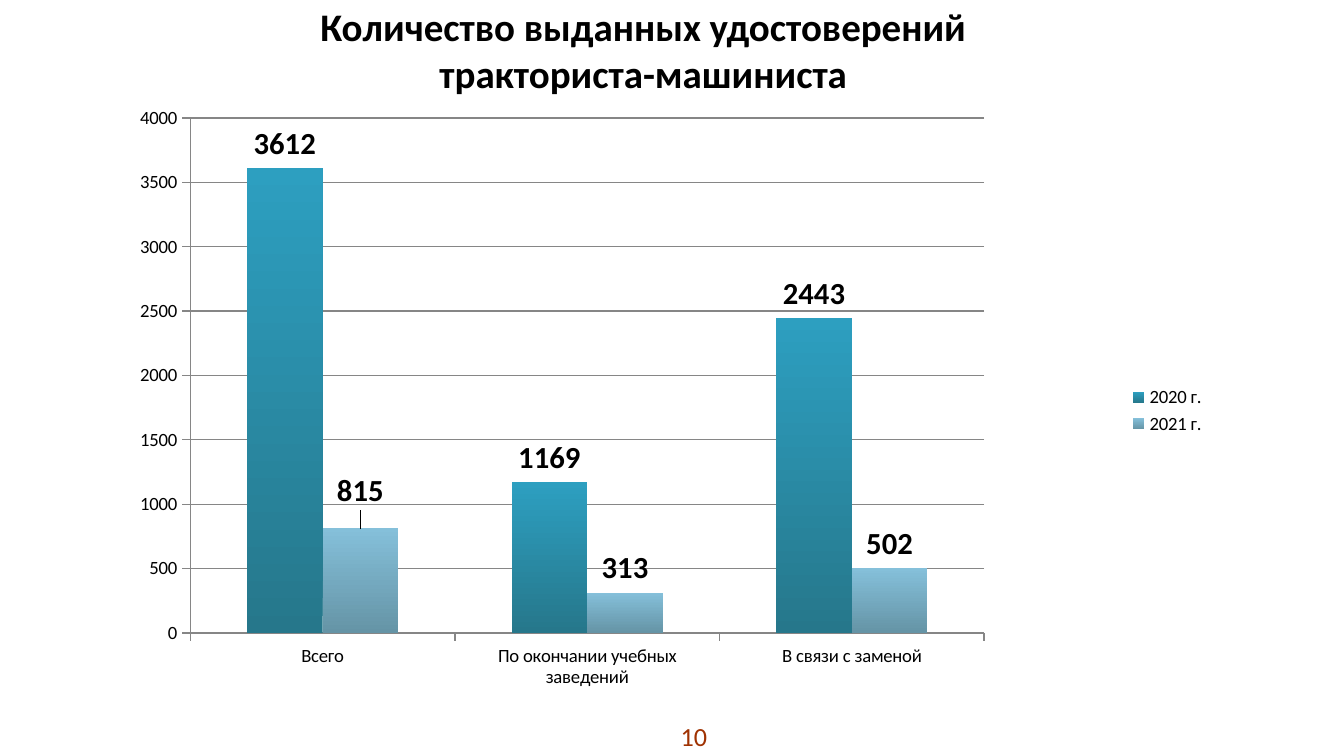
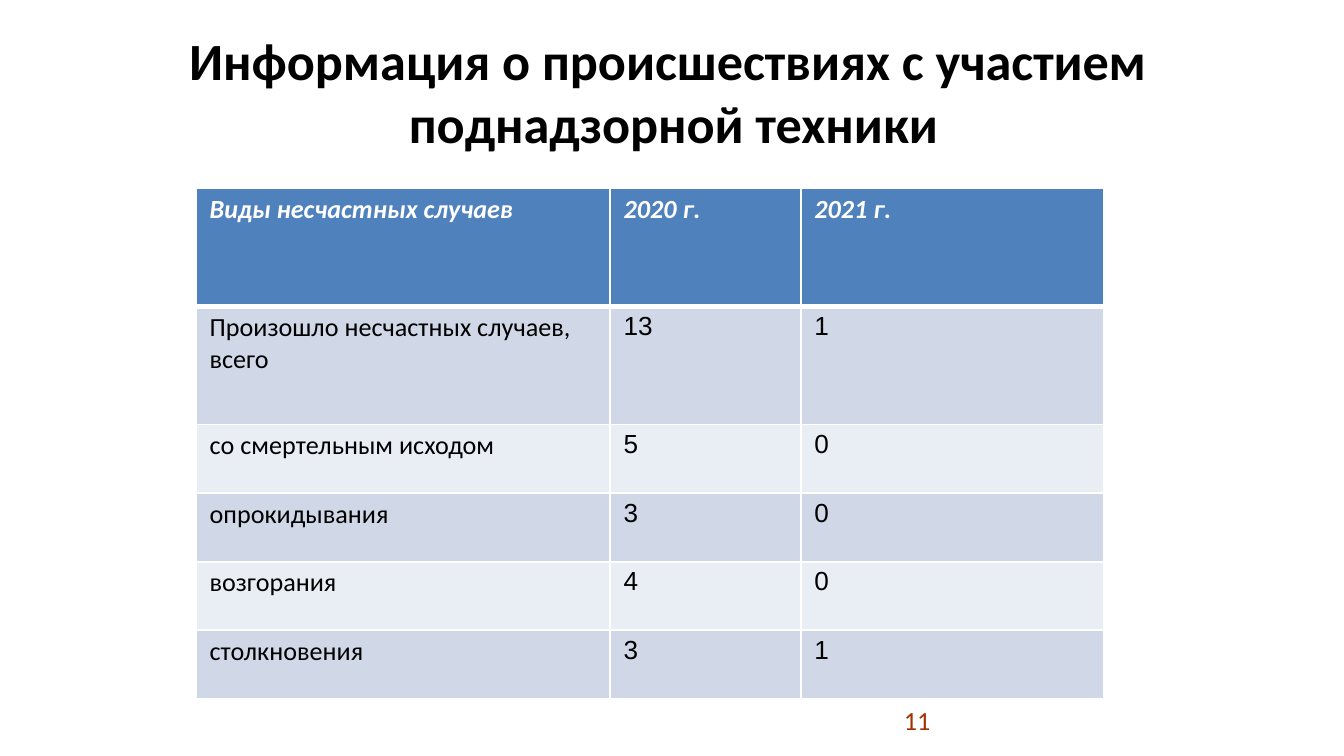
"""Build two slides: tractor licences issued (chart) and machinery accidents (table)."""
from dataclasses import dataclass

from lxml import etree
from pptx import Presentation
from pptx.chart.data import CategoryChartData
from pptx.dml.color import RGBColor
from pptx.enum.chart import XL_CHART_TYPE, XL_LABEL_POSITION, XL_LEGEND_POSITION, XL_TICK_MARK
from pptx.enum.text import MSO_ANCHOR, PP_ALIGN
from pptx.oxml import parse_xml
from pptx.oxml.ns import nsdecls, qn
from pptx.util import Inches, Pt

LEFT, CENTER, RIGHT = PP_ALIGN.LEFT, PP_ALIGN.CENTER, PP_ALIGN.RIGHT
MIDDLE = MSO_ANCHOR.MIDDLE
COLUMNS = XL_CHART_TYPE.COLUMN_CLUSTERED
OUTSIDE_END = XL_LABEL_POSITION.OUTSIDE_END
LEGEND_RIGHT = XL_LEGEND_POSITION.RIGHT
TICK_OUT = XL_TICK_MARK.OUTSIDE


@dataclass(frozen=True)
class Theme:
    font: str = "Calibri"
    number_font: str = "Arial"
    text: str = "000000"
    white: str = "FFFFFF"
    page_number: str = "A03202"
    axis: str = "868686"
    header: str = "4F81BD"
    bands: tuple = ("D0D8E8", "E9EDF4")
    bars: tuple = (("26778B", "2D9FC0"), ("6594A6", "85C0DA"))
    body_size: float = 14
    chart_size: float = 10
    label_size: float = 16.4
    small_title: float = 20.9
    large_title: float = 28


theme = Theme()


def write(frame, text, size=theme.body_size, color=theme.text, font=theme.font,
          bold=False, italic=False, align=LEFT):
    para = frame.paragraphs[0]
    para.alignment = align
    for index, line in enumerate(text.split("\n")):
        if index:
            para.add_line_break()
        span = para.add_run()
        span.text = line
        span.font.size = Pt(size)
        span.font.name = font
        span.font.bold = bold
        span.font.italic = italic
        span.font.color.rgb = RGBColor.from_string(color)


def add_text(page, area, text, bottom=0.05, **style):
    box = page.shapes.add_textbox(*map(Inches, area))
    frame = box.text_frame
    frame.word_wrap = True
    frame.vertical_anchor = MIDDLE
    frame.margin_bottom = Inches(bottom)
    write(frame, text, **style)


deck = Presentation()
deck.slide_width = Inches(10)
deck.slide_height = deck.slide_width * 9 // 16
blank = deck.slide_layouts[6]
chart_page, table_page = deck.slides.add_slide(blank), deck.slides.add_slide(blank)

titles = [
    (chart_page, (0.51, 0.07, 8.62, 1.09), theme.small_title, 0.54,
     "Количество выданных удостоверений \nтракториста-машиниста "),
    (table_page, (0.51, 0.21, 9, 0.94), theme.large_title, 0.05,
     "Информация о происшествиях с участием \nподнадзорной техники"),
]
for page, area, size, bottom, title in titles:
    add_text(page, area, title, bottom=bottom, size=size, bold=True, align=CENTER)

for page, left, top, number in [(chart_page, 4.21, 5.33, "10"), (table_page, 5.87, 5.21, "11")]:
    add_text(page, (left, top, 1.15, 0.3), number, color=theme.page_number, align=RIGHT)

licences = CategoryChartData()
licences.categories = ["Всего", "По окончании учебных заведений", "В связи с заменой"]
licences.add_series("2020 г.", (3612, 1169, 2443))
licences.add_series("2021 г.", (815, 313, 502))
chart = chart_page.shapes.add_chart(
    COLUMNS, Inches(0.75), Inches(0.69), Inches(8.32), Inches(4.73), licences).chart
chart.has_title = False
chart.font.size = Pt(theme.chart_size)
chart.font.name = theme.font
chart.font.color.rgb = RGBColor.from_string(theme.text)
chart.has_legend = True
chart.legend.position = LEGEND_RIGHT
chart.legend.include_in_layout = False

values = chart.value_axis
values.minimum_scale, values.maximum_scale, values.major_unit = 0, 4000, 500
values.has_major_gridlines = True
for axis in (chart.category_axis, values):
    axis.major_tick_mark = TICK_OUT
for lines in (chart.category_axis.format.line, values.format.line,
              values.major_gridlines.format.line):
    lines.color.rgb = RGBColor.from_string(theme.axis)
    lines.width = Pt(0.75)

plot = chart.plots[0]
plot.gap_width, plot.overlap = 150, 0
plot.vary_by_categories = False
for series, shades in zip(plot.series, theme.bars):
    fill = series.format.fill
    fill.gradient()
    fill.gradient_angle = 90
    for stop, shade in zip(fill.gradient_stops, shades):
        stop.color.rgb = RGBColor.from_string(shade)
    labels = series.data_labels
    labels.show_value = True
    labels.position = OUTSIDE_END
    labels.font.size = Pt(theme.label_size)
    labels.font.bold = True
    labels.font.name = theme.font
    labels.font.color.rgb = RGBColor.from_string(theme.text)

raised = plot.series[1].points[0].data_label
raised.position = OUTSIDE_END
raised.font.size = Pt(theme.label_size)
raised.font.bold = True

plot_area = chart.element.find(".//" + qn("c:plotArea"))
for layout in plot_area.findall(qn("c:layout")):
    plot_area.remove(layout)
layouts = [
    (plot_area, 0, {"layoutTarget": "inner", "xMode": "edge", "yMode": "edge",
                    "x": 0.08, "y": 0.04, "w": 0.71, "h": 0.81}),
    (plot_area.find(".//" + qn("c:dLbl")), 1, {"x": 0, "y": -0.02}),
]
for parent, position, settings in layouts:
    layout = parse_xml(f"<c:layout {nsdecls('c')}><c:manualLayout/></c:layout>")
    for name, value in settings.items():
        etree.SubElement(layout[0], qn("c:" + name)).set("val", str(value))
    parent.insert(position, layout)

accidents = [
    ("Виды несчастных случаев", "2020 г.", "2021 г."),
    ("Произошло несчастных случаев, всего", "13", "1"),
    ("со смертельным исходом", "5", "0"),
    ("опрокидывания", "3", "0"),
    ("возгорания", "4", "0"),
    ("столкновения", "3", "1"),
]
widths = (3.08, 1.42, 2.25)
heights = (0.88, 0.88, 0.51, 0.51, 0.51, 0.51)
table = table_page.shapes.add_table(
    len(heights), len(widths), Inches(1.46), Inches(1.4),
    Inches(sum(widths)), Inches(sum(heights))).table
for column, width in zip(table.columns, widths):
    column.width = Inches(width)
for row_index, (row, height, texts) in enumerate(zip(table.rows, heights, accidents)):
    row.height = Inches(height)
    is_header = row_index == 0
    band = theme.header if is_header else theme.bands[(row_index - 1) % 2]
    borders = {"L": 1, "R": 1, "T": 3 if row_index == 1 else 1, "B": 3 if is_header else 1}
    for column_index, (cell, text) in enumerate(zip(row.cells, texts)):
        cell.margin_left = cell.margin_right = Inches(0.1)
        cell.margin_top = cell.margin_bottom = Inches(0.04)
        is_number = column_index > 0 and not is_header
        write(cell.text_frame, text, bold=is_header, italic=is_header,
              color=theme.white if is_header else theme.text,
              font=theme.number_font if is_number else theme.font)
        properties = cell._tc.get_or_add_tcPr()
        for side, width in borders.items():
            properties.append(parse_xml(
                f'<a:ln{side} {nsdecls("a")} w="{Pt(width)}"><a:solidFill>'
                f'<a:srgbClr val="{theme.white}"/></a:solidFill></a:ln{side}>'))
        cell.fill.solid()
        cell.fill.fore_color.rgb = RGBColor.from_string(band)

deck.save("out.pptx")
